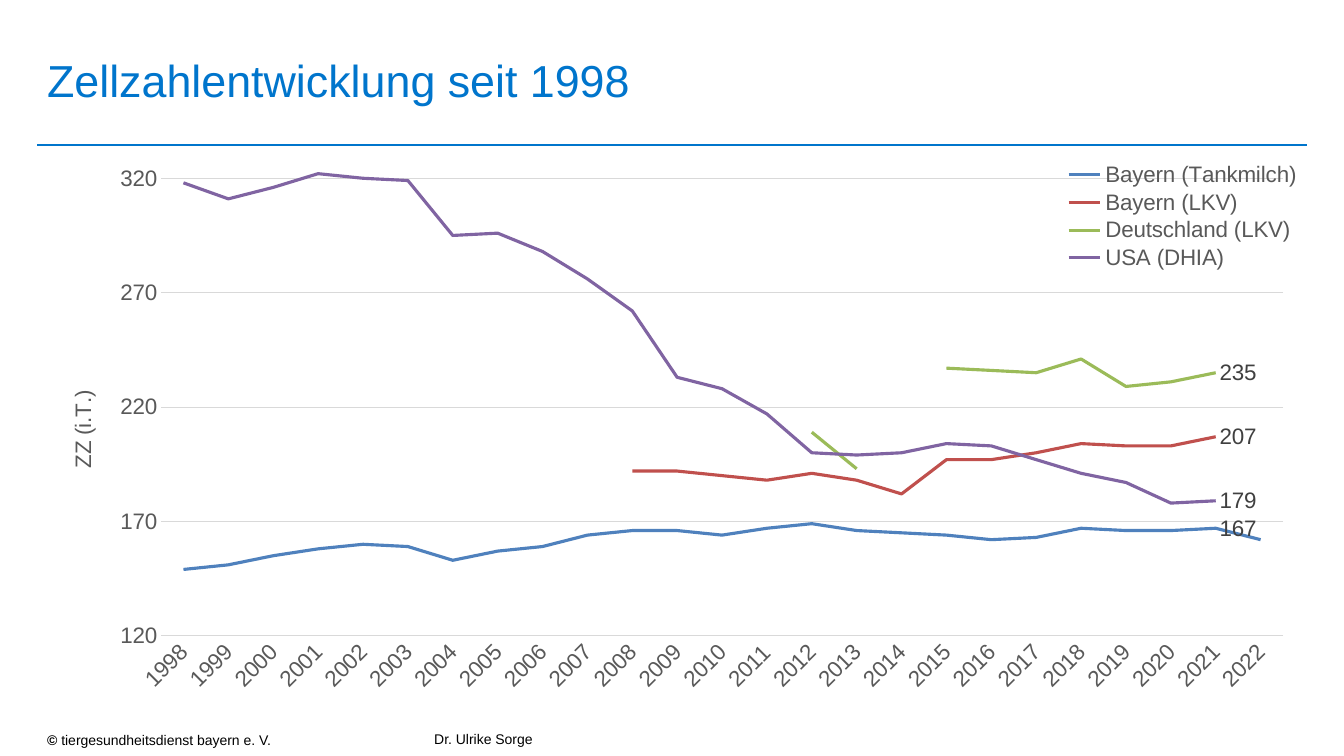
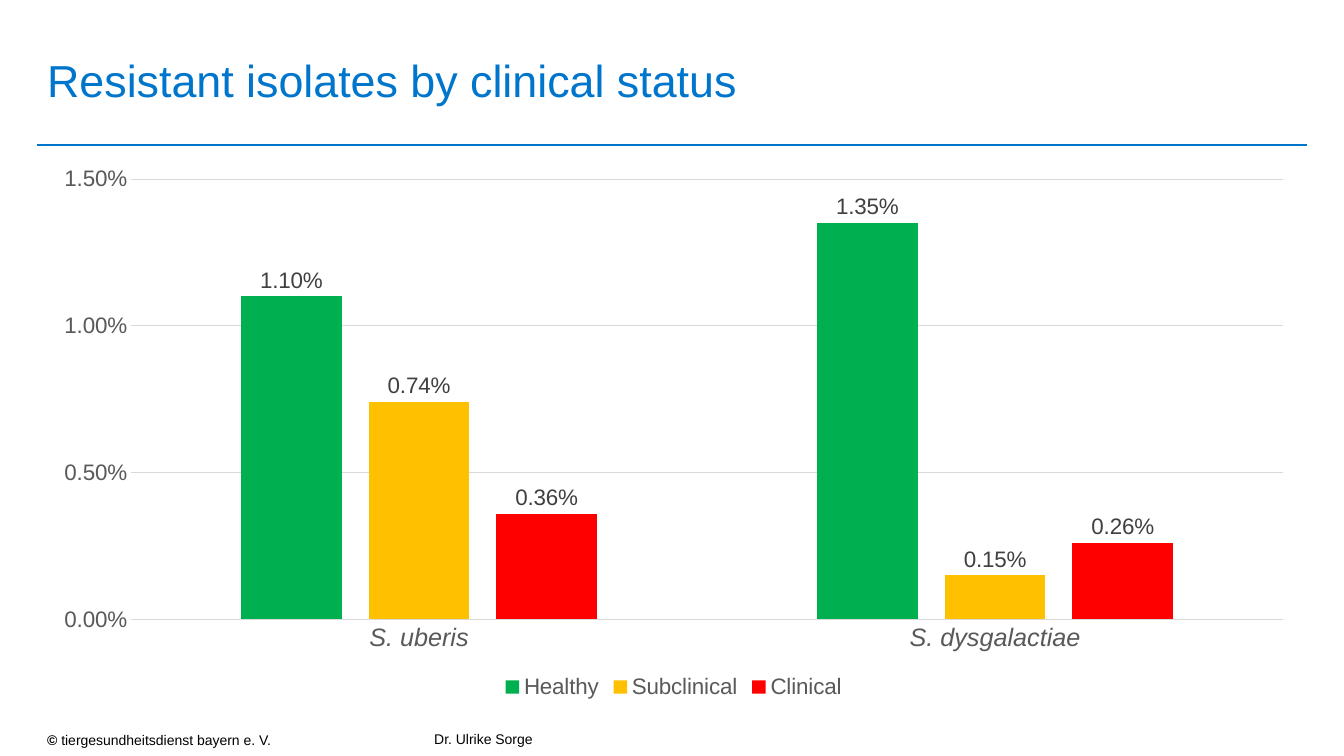
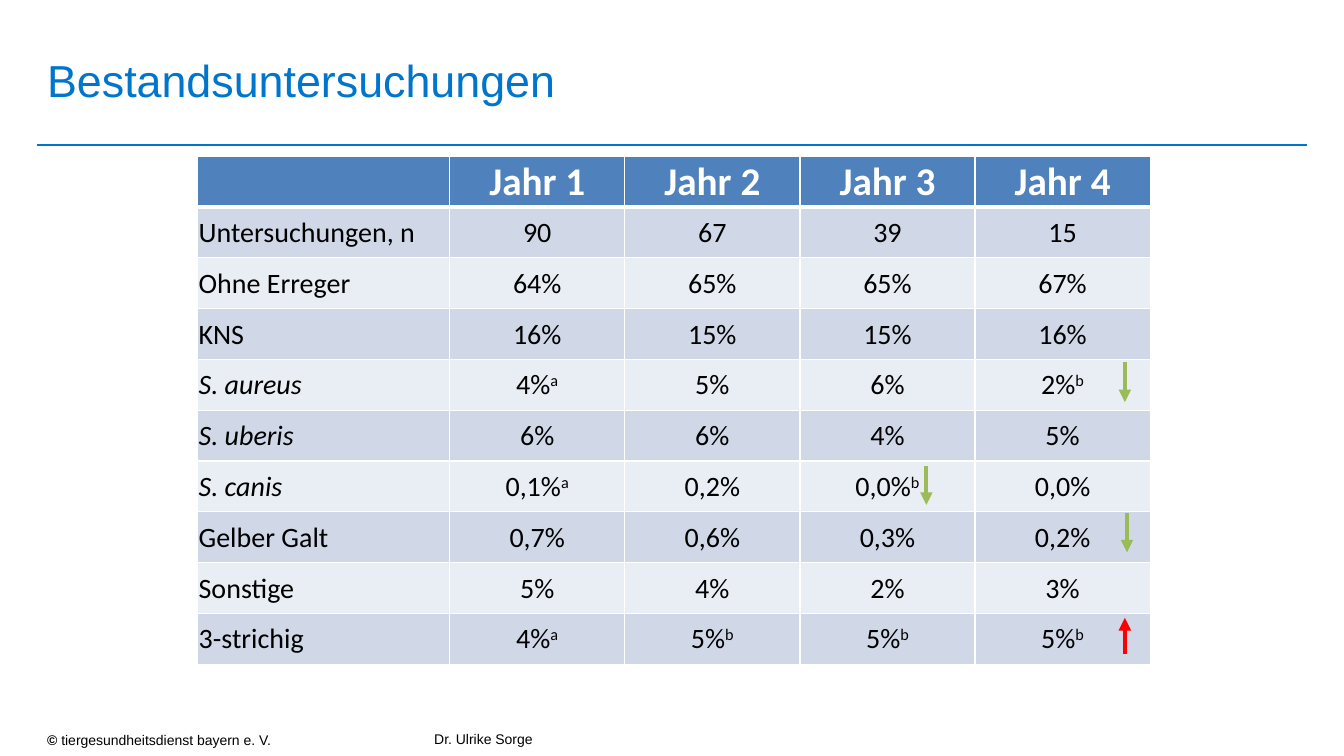
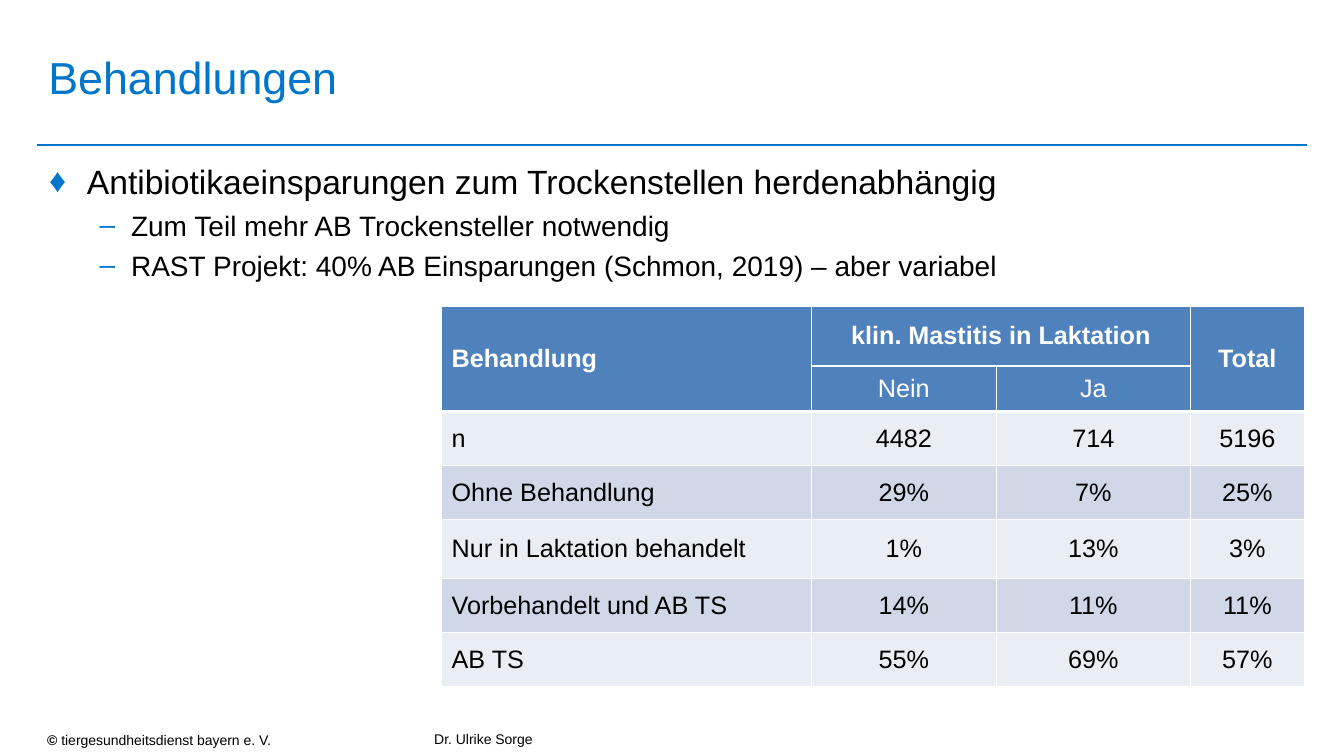
from dataclasses import dataclass
from itertools import product

from lxml.etree import SubElement
from pptx import Presentation
from pptx.chart.data import CategoryChartData
from pptx.dml.color import RGBColor
from pptx.enum.chart import XL_CHART_TYPE, XL_LABEL_POSITION, XL_LEGEND_POSITION, XL_TICK_MARK
from pptx.enum.shapes import MSO_CONNECTOR
from pptx.enum.text import MSO_ANCHOR, PP_ALIGN
from pptx.oxml.ns import qn
from pptx.util import Pt


@dataclass(frozen=True)
class Theme:
    font: str = "Arial"
    table_font: str = "Calibri"
    blue: str = "0075CC"
    black: str = "000000"
    white: str = "FFFFFF"
    axis: str = "595959"
    label: str = "404040"
    grid: str = "D9D9D9"
    header: str = "4F81BD"
    band_dark: str = "D0D8E8"
    band_light: str = "E9EDF4"
    green: str = "9BBB59"
    red: str = "FF0000"
    title_size: float = 32
    footer_size: float = 10
    chart_size: float = 16
    category_size: float = 18


THEME = Theme()

# Content: shared parts
SLIDE_SIZE = (960, 540)
TITLE_BOX = (26.6, 14.4, 816.5, 85)
FOOTERS = [
    ((303.1, 518.4, 343.4, 17.3), [("Dr. Ulrike Sorge", False)]),
    ((26.6, 519.1, 257, 14.4), [("© ", True), ("tiergesundheitsdienst bayern e. V.", False)]),
]
CHART_BOX = (28, 111.6, 906.5, 391)

# Content: charts (boxes inside a chart are slide positions)
CELL_COUNT_CHART = {
    "type": XL_CHART_TYPE.LINE,
    "number_format": "0",
    "categories": [str(year) for year in range(1998, 2023)],
    "series": [
        ("Bayern (Tankmilch)", "4F81BD",
         [149, 151, 155, 158, 160, 159, 153, 157, 159, 164, 166, 166, 164,
          167, 169, 166, 165, 164, 162, 163, 167, 166, 166, 167, 162]),
        ("Bayern (LKV)", "C0504D",
         [None] * 10 + [192, 192, 190, 188, 191, 188, 182, 197, 197, 200, 204, 203, 203, 207, None]),
        ("Deutschland (LKV)", "9BBB59",
         [None] * 14 + [209, 193, None, 237, 236, 235, 241, 229, 231, 235, None]),
        ("USA (DHIA)", "8064A2",
         [318, 311, 316, 322, 320, 319, 295, 296, 288, 276, 262, 233, 228,
          217, 200, 199, 200, 204, 203, 197, 191, 187, 178, 179, None]),
    ],
    "scale": {"minimum_scale": 120, "maximum_scale": 325, "major_unit": 50},
    "legend": XL_LEGEND_POSITION.CORNER,
    "overlay": True,
    "plot_box": (115, 119.2, 801.5, 335),
}
LABELLED_YEAR = CELL_COUNT_CHART["categories"].index("2021")
AXIS_TITLE = "ZZ (i.T.)"
AXIS_TITLE_BOX = (46, 275.7)
LEGEND_BOX = (764, 113.5, 169, 82)

RESISTANCE_CHART = {
    "type": XL_CHART_TYPE.COLUMN_CLUSTERED,
    "number_format": "0.00%",
    "categories": ["S. uberis", "S. dysgalactiae"],
    "series": [
        ("Healthy", "00B050", [0.011, 0.0135]),
        ("Subclinical", "FFC000", [0.0074, 0.0015]),
        ("Clinical", "FF0000", [0.0036, 0.0026]),
    ],
    "scale": {"minimum_scale": 0, "maximum_scale": 0.015, "major_unit": 0.005},
    "legend": XL_LEGEND_POSITION.BOTTOM,
    "overlay": False,
    "plot_box": (93.5, 127.9, 823, 314.6),
}

# Content: tables ("^" starts a superscript, None is covered by a merge)
HERD_TABLE = {
    "position": (141.2, 111.6),
    "columns": [180] + [125.1] * 4,
    "heights": [36.3] * 10,
    "header_rows": 1,
    "bands": (THEME.band_dark, THEME.band_light),
    "font": THEME.table_font,
    "header_size": 28,
    "body_size": 20,
    "margins": {"margin_left": 0.7, "margin_top": 0.7, "margin_right": 0.7, "margin_bottom": 0},
    "rows": [
        ["", "Jahr 1", "Jahr 2", "Jahr 3", "Jahr 4"],
        ["Untersuchungen, n", "90", "67", "39", "15"],
        ["Ohne Erreger", "64%", "65%", "65%", "67%"],
        ["KNS", "16%", "15%", "15%", "16%"],
        ["S. aureus", "4%^a", "5%", "6%", "2%^b"],
        ["S. uberis", "6%", "6%", "4%", "5%"],
        ["S. canis", "0,1%^a", "0,2%", "0,0%^b", "0,0%"],
        ["Gelber Galt", "0,7%", "0,6%", "0,3%", "0,2%"],
        ["Sonstige", "5%", "4%", "2%", "3%"],
        ["3-strichig", "4%^a", "5%^b", "5%^b", "5%^b"],
    ],
    "merges": [],
}
TREND_ARROWS = [  # x, start y, end y, colour
    (803.5, 258.5, 287.3, THEME.green),
    (805, 366.5, 394.6, THEME.green),
    (803.5, 467.3, 441.4, THEME.red),
    (661.7, 332.6, 360.7, THEME.green),
]

TREATMENT_TABLE = {
    "position": (315.4, 218.9),
    "columns": [264.2, 132, 138.8, 81.3],
    "heights": [42.5, 32.6, 38.5, 38.5, 42.5, 38.4, 38.4],
    "header_rows": 2,
    "bands": (THEME.band_light, THEME.band_dark),
    "font": THEME.font,
    "header_size": 18,
    "body_size": 18,
    "margins": {},
    "rows": [
        ["Behandlung", "klin. Mastitis in Laktation", None, "Total"],
        [None, "Nein", "Ja", None],
        ["n", "4482", "714", "5196"],
        ["Ohne Behandlung", "29%", "7%", "25%"],
        ["Nur in Laktation behandelt", "1%", "13%", "3%"],
        ["Vorbehandelt und AB TS", "14%", "11%", "11%"],
        ["AB TS", "55%", "69%", "57%"],
    ],
    "merges": [((0, 0), (1, 0)), ((0, 1), (0, 2)), ((0, 3), (1, 3))],
}
BULLET_BOX = (28, 111.6, 931.5, 391)
BULLET_STYLES = [  # symbol, left margin, hanging indent, size
    ("♦", 27, 27, 24),
    ("–", 58.5, 22.5, 20),
]
BULLETS = [
    (0, "Antibiotikaeinsparungen zum Trockenstellen herdenabhängig"),
    (1, "Zum Teil mehr AB Trockensteller notwendig"),
    (1, "RAST Projekt: 40% AB Einsparungen (Schmon, 2019) – aber variabel"),
]


# Formatting helpers
def points(values):
    return [Pt(value) for value in values]


def set_values(target, values):
    for name, value in values.items():
        setattr(target, name, value)


def set_font(font, size, color, name=THEME.font, bold=False, italic=False):
    set_values(font, {"size": Pt(size), "name": name, "bold": bold, "italic": italic})
    font.color.rgb = RGBColor.from_string(color)


def set_line(line, color, width):
    line.color.rgb = RGBColor.from_string(color)
    line.width = Pt(width)


def add_run(paragraph, text, size, color, **style):
    run = paragraph.add_run()
    run.text = text
    set_font(run.font, size, color, **style)
    return run


def add_text_box(slide, box, anchor=MSO_ANCHOR.TOP):
    frame = slide.shapes.add_textbox(*points(box)).text_frame
    set_values(frame, {"word_wrap": True, "vertical_anchor": anchor})
    return frame


def add_line(slide, start, end, color, width, arrow=False):
    connector = slide.shapes.add_connector(MSO_CONNECTOR.STRAIGHT, *points(start + end))
    set_line(connector.line, color, width)
    properties = connector._element.spPr
    if arrow:
        SubElement(properties.find(qn("a:ln")), qn("a:tailEnd"), type="triangle")
    SubElement(properties, qn("a:effectLst"))


def add_base_slide(presentation, title, title_box=TITLE_BOX):
    slide = presentation.slides.add_slide(presentation.slide_layouts[6])
    for box, runs in FOOTERS:
        paragraph = add_text_box(slide, box).paragraphs[0]
        for text, bold in runs:
            add_run(paragraph, text, THEME.footer_size, THEME.black, bold=bold)
    add_line(slide, (26.6, 103.7), (933.8, 103.7), THEME.blue, 1.75)
    frame = add_text_box(slide, title_box, MSO_ANCHOR.MIDDLE)
    add_run(frame.paragraphs[0], title, THEME.title_size, THEME.blue)
    return slide


# Charts
def place_in_chart(element, index, box, inner=False):
    """Give a chart part a fixed place, from its slide position in points."""
    layout = element.find(qn("c:layout"))
    if layout is not None:
        element.remove(layout)
    layout = element.makeelement(qn("c:layout"))
    element.insert(index, layout)
    manual = SubElement(layout, qn("c:manualLayout"))
    if inner:
        SubElement(manual, qn("c:layoutTarget"), val="inner")
    for tag in ("xMode", "yMode"):
        SubElement(manual, qn("c:" + tag), val="edge")
    left, top, width, height = CHART_BOX
    fractions = [(box[0] - left) / width, (box[1] - top) / height]
    fractions += [size / total for size, total in zip(box[2:], (width, height))]
    for tag, fraction in zip("xywh", fractions):
        SubElement(manual, qn("c:" + tag), val=f"{fraction:.4f}")


def add_chart(slide, content):
    data = CategoryChartData(number_format=content["number_format"])
    data.categories = content["categories"]
    for name, _, values in content["series"]:
        data.add_series(name, values)
    chart = slide.shapes.add_chart(content["type"], *points(CHART_BOX), data).chart
    set_values(chart, {"has_title": False, "has_legend": True})
    set_font(chart.font, THEME.chart_size, THEME.black)
    set_values(chart.legend, {"position": content["legend"], "include_in_layout": content["overlay"]})
    set_font(chart.legend.font, THEME.chart_size, THEME.axis)
    chart.plots[0].vary_by_categories = False

    category_axis, value_axis = chart.category_axis, chart.value_axis
    for axis in (category_axis, value_axis):
        set_values(axis, {"major_tick_mark": XL_TICK_MARK.NONE, "minor_tick_mark": XL_TICK_MARK.NONE})
        set_font(axis.tick_labels.font, THEME.chart_size, THEME.axis)
    set_line(category_axis.format.line, THEME.grid, 0.75)
    set_values(value_axis, {**content["scale"], "has_major_gridlines": True})
    set_line(value_axis.major_gridlines.format.line, THEME.grid, 0.75)
    value_axis.format.line.fill.background()
    set_values(value_axis.tick_labels,
               {"number_format": content["number_format"], "number_format_is_linked": False})
    place_in_chart(chart._chartSpace.chart.plotArea, 0, content["plot_box"], inner=True)
    return chart


def add_cell_count_chart(slide):
    chart = add_chart(slide, CELL_COUNT_CHART)
    for series, (_, color, _) in zip(chart.plots[0].series, CELL_COUNT_CHART["series"]):
        series.smooth = False
        set_line(series.format.line, color, 2.25)
        label = series.points[LABELLED_YEAR].data_label
        set_font(label.font, THEME.chart_size, THEME.label)
        label.position = XL_LABEL_POSITION.RIGHT
    labels = chart.category_axis.tick_labels.font
    labels_text = chart.category_axis._element.find(qn("c:txPr"))
    labels_text.find(qn("a:bodyPr")).set("rot", "-2700000")
    set_font(labels, THEME.chart_size, THEME.axis)
    title = chart.value_axis.axis_title
    add_run(title.text_frame.paragraphs[0], AXIS_TITLE, THEME.chart_size, THEME.axis)
    title.text_frame._txBody.find(qn("a:bodyPr")).set("rot", "-5400000")
    place_in_chart(title._element, 1, AXIS_TITLE_BOX)
    place_in_chart(chart.legend._element, 1, LEGEND_BOX)


def add_resistance_chart(slide):
    chart = add_chart(slide, RESISTANCE_CHART)
    plot = chart.plots[0]
    set_values(plot, {"gap_width": 219, "overlap": -27, "has_data_labels": True})
    set_values(plot.data_labels, {
        "show_value": True,
        "position": XL_LABEL_POSITION.OUTSIDE_END,
        "number_format": RESISTANCE_CHART["number_format"],
        "number_format_is_linked": False,
    })
    set_font(plot.data_labels.font, THEME.chart_size, THEME.label)
    set_font(chart.category_axis.tick_labels.font, THEME.category_size, THEME.axis, italic=True)
    for series, (_, color, _) in zip(plot.series, RESISTANCE_CHART["series"]):
        series.format.fill.solid()
        series.format.fill.fore_color.rgb = RGBColor.from_string(color)


# Tables
def set_borders(cell, top, bottom):
    properties = cell._tc.get_or_add_tcPr()
    widths = {"a:lnL": 1, "a:lnR": 1, "a:lnT": top, "a:lnB": bottom}
    for index, (tag, width) in enumerate(widths.items()):
        line = properties.makeelement(qn(tag), {"w": str(Pt(width))})
        SubElement(SubElement(line, qn("a:solidFill")), qn("a:srgbClr"), val=THEME.white)
        properties.insert(index, line)


def add_table(slide, content):
    rows, columns, heights = content["rows"], content["columns"], content["heights"]
    header_rows = content["header_rows"]
    box = (*content["position"], sum(columns), sum(heights))
    table = slide.shapes.add_table(len(rows), len(columns), *points(box)).table
    set_values(table, {"first_row": False, "horz_banding": False})
    for column, width in zip(table.columns, columns):
        column.width = Pt(width)
    for row, height in zip(table.rows, heights):
        row.height = Pt(height)

    for row, column in product(range(len(rows)), range(len(columns))):
        cell, text = table.cell(row, column), rows[row][column]
        is_header = row < header_rows
        fill = THEME.header if is_header else content["bands"][(row - header_rows) % 2]
        cell.fill.solid()
        cell.fill.fore_color.rgb = RGBColor.from_string(fill)
        set_borders(cell, top=3 if row == header_rows else 1, bottom=3 if row == header_rows - 1 else 1)
        set_values(cell, {name: Pt(value) for name, value in content["margins"].items()})
        cell.vertical_anchor = MSO_ANCHOR.MIDDLE
        if not text:
            continue
        paragraph = cell.text_frame.paragraphs[0]
        paragraph.alignment = PP_ALIGN.CENTER if column else PP_ALIGN.LEFT
        for position, part in enumerate(text.split("^")):
            run = add_run(
                paragraph, part,
                content["header_size"] if is_header else content["body_size"],
                THEME.white if is_header else THEME.black,
                name=content["font"], bold=row == 0, italic=text.startswith("S. "))
            if position:
                run._r.get_or_add_rPr().set("baseline", "30000")
    for first, last in content["merges"]:
        table.cell(*first).merge(table.cell(*last))


# Bullets
def add_bullets(slide):
    frame = add_text_box(slide, BULLET_BOX)
    for index, (level, text) in enumerate(BULLETS):
        symbol, margin, hanging, size = BULLET_STYLES[level]
        paragraph = frame.add_paragraph() if index else frame.paragraphs[0]
        properties = paragraph._p.get_or_add_pPr()
        properties.set("marL", str(Pt(margin)))
        properties.set("indent", str(-Pt(hanging)))
        SubElement(SubElement(properties, qn("a:buClr")), qn("a:srgbClr"), val=THEME.blue)
        SubElement(properties, qn("a:buFont"), typeface=THEME.font)
        SubElement(properties, qn("a:buChar"), char=symbol)
        paragraph.level = level
        if index:
            paragraph.space_before = Pt(4.8)
        add_run(paragraph, text, size, THEME.black)


def main():
    presentation = Presentation()
    presentation.slide_width, presentation.slide_height = points(SLIDE_SIZE)

    add_cell_count_chart(add_base_slide(presentation, "Zellzahlentwicklung seit 1998"))
    add_resistance_chart(add_base_slide(presentation, "Resistant isolates by clinical status"))

    herd_slide = add_base_slide(presentation, "Bestandsuntersuchungen")
    add_table(herd_slide, HERD_TABLE)
    for x, start, end, color in TREND_ARROWS:
        add_line(herd_slide, (x, start), (x, end), color, 3, arrow=True)

    treatment_slide = add_base_slide(presentation, "Behandlungen", (27.4, 12.2, 816.5, 85))
    add_bullets(treatment_slide)
    add_table(treatment_slide, TREATMENT_TABLE)

    presentation.save("out.pptx")


if __name__ == "__main__":
    main()
